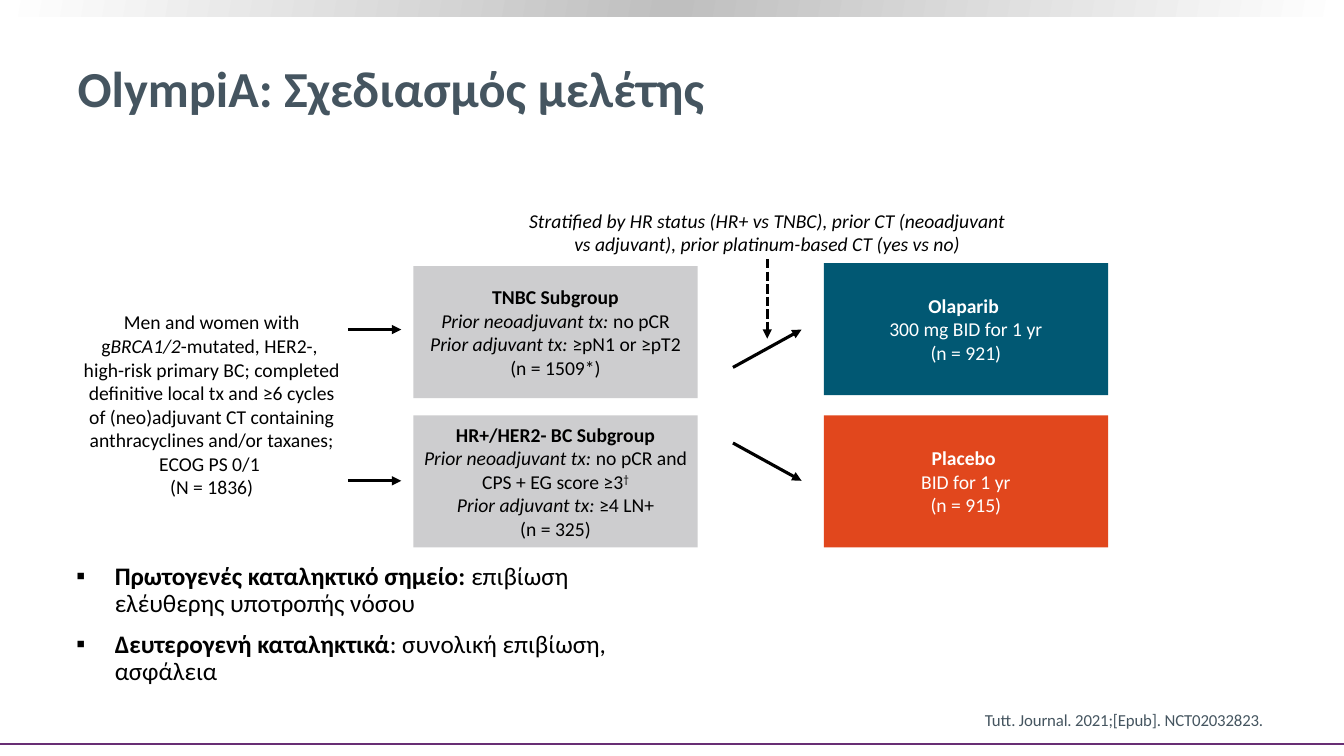
"""Build the OlympiA study design slide."""
import pptx
import pptx.util
import pptx.dml.color
import pptx.enum.dml
import pptx.enum.shapes
import pptx.enum.text
import pptx.oxml
import pptx.oxml.ns

Inches, Pt = pptx.util.Inches, pptx.util.Pt
ALIGN, ANCHOR = pptx.enum.text.PP_ALIGN, pptx.enum.text.MSO_ANCHOR
RECT = pptx.enum.shapes.MSO_SHAPE.RECTANGLE
NS = pptx.oxml.ns.nsdecls("a")

W, H = 13.33, 7.5
BLACK, WHITE, SLATE, GREY = "000000", "FFFFFF", "455560", "CDCDCF"
TEAL, ORANGE, PURPLE = "015873", "E1471D", "682E74"

TITLE = [[("OlympiA: Σχεδιασμός μελέτης", "b")]]
POPULATION = [
    [("Men and women with g", ""), ("BRCA1/2", "i"),
     ("-mutated, HER2-, \nhigh-risk primary BC; completed definitive local tx and ≥6 cycles "
      "of (neo)adjuvant CT containing anthracyclines and/or taxanes; ECOG PS 0/1 ", "")],
    [("(N = 1836)", "")],
]
STRATA = [[("Stratified by HR status (HR+ vs TNBC), prior CT (neoadjuvant vs adjuvant), "
            "prior platinum-based CT (yes vs no)", "i")]]
TNBC = [
    [("TNBC Subgroup", "b")],
    [("Prior neoadjuvant tx:", "i"), (" no pCR", "")],
    [("Prior adjuvant tx:", "i"), (" ≥pN1 or ≥pT2", "")],
    [("(n = 1509*)", "")],
]
HR_POSITIVE = [
    [("HR+/HER2- BC Subgroup", "b")],
    [("Prior neoadjuvant tx:", "i"), (" no pCR and CPS + EG score ≥3", ""), ("†", "^")],
    [("Prior adjuvant tx:", "i"), (" ≥4 LN+", "")],
    [("(n = 325)", "")],
]
OLAPARIB = [[("Olaparib ", "b")], [("300 mg BID for 1 yr", "")], [("(n = 921)", "")]]
PLACEBO = [[("Placebo ", "b")], [("BID for 1 yr", "")], [("(n = 915)", "")]]
ENDPOINTS = [
    [("Πρωτογενές καταληκτικό σημείο: ", "b"), ("επιβίωση ελέυθερης υποτροπής νόσου", "")],
    [("Δευτερογενή καταληκτικά", "b"), (": συνολική επιβίωση, ασφάλεια", "")],
]
CITATION = [[("Tutt. Journal. 2021;[Epub]. NCT02032823.", "~")]]

BOX_W, BOX_H = 2.82, 1.31
SUBGROUP_X, ARM_X = 4.1, 8.17
ROW_Y = (2.61, 4.12)
ROW_MID = (3.27, 4.77)
CENTRE_Y = sum(ROW_MID) / 2
ENTRY_X, SPLIT_X = (3.45, 3.98), (7.27, 7.95)
STRATA_X = sum(SPLIT_X) / 2
BOXES = [
    (SUBGROUP_X, ROW_Y[0] + 0.03, GREY, BLACK, TNBC),
    (SUBGROUP_X, ROW_Y[1], GREY, BLACK, HR_POSITIVE),
    (ARM_X, ROW_Y[0], TEAL, WHITE, OLAPARIB),
    (ARM_X, ROW_Y[1], ORANGE, WHITE, PLACEBO),
]
TEXTS = [
    ((0.69, 3.03, BOX_W, 1.99), POPULATION, 14, BLACK, ALIGN.CENTER, ANCHOR.TOP),
    ((5.12, 2.02, 4.98, 0.57), STRATA, 14, BLACK, ALIGN.CENTER, ANCHOR.MIDDLE),
    ((0.45, 6.99, 12.18, 0.3), CITATION, 12, SLATE, ALIGN.RIGHT, ANCHOR.BOTTOM),
]
RUN_XML = {"^": ("baseline", "30000"), "~": ("spc", "-10")}


def rgb(code):
    """Turn a hex string into a colour."""
    return pptx.dml.color.RGBColor.from_string(code)


def apply(obj, values):
    """Set attributes from a dict."""
    for name, value in values.items():
        setattr(obj, name, value)


def write(sp, paragraphs, size, color, align, anchor):
    """Fill a shape with paragraphs of (text, style) runs."""
    tf = sp.text_frame
    apply(tf, {"word_wrap": True, "vertical_anchor": anchor})
    for n, runs in enumerate(paragraphs):
        p = tf.add_paragraph() if n else tf.paragraphs[0]
        p.alignment = align
        for text, style in runs:
            for k, line in enumerate(text.split("\n")):
                if k:
                    p.add_line_break()
                r = p.add_run()
                r.text = line
                apply(r.font, {"name": "Calibri", "size": Pt(size),
                               "bold": "b" in style, "italic": "i" in style})
                r.font.color.rgb = rgb(color)
                if style in RUN_XML:
                    r._r.get_or_add_rPr().set(*RUN_XML[style])
    return tf


def add_rect(s, place, color):
    """Add a plain filled rectangle."""
    sp = s.shapes.add_shape(RECT, *map(Inches, place))
    sp.shadow.inherit = False
    sp.fill.solid()
    sp.fill.fore_color.rgb = rgb(color)
    sp.line.fill.background()
    return sp


def add_text(s, place, *content):
    """Add a text box with its text."""
    return write(s.shapes.add_textbox(*map(Inches, place)), *content)


def add_line(s, ends, color=BLACK, width=2.25, arrow=True):
    """Add a straight line, with an arrowhead at its end if wanted."""
    line = s.shapes.add_connector(pptx.enum.shapes.MSO_CONNECTOR.STRAIGHT, *map(Inches, ends))
    line.line.color.rgb = rgb(color)
    line.line.width = Pt(width)
    if arrow:
        line.line._get_or_add_ln().append(
            pptx.oxml.parse_xml(f'<a:tailEnd {NS} type="triangle"/>'))
    line._element.spPr.append(pptx.oxml.parse_xml(f"<a:effectLst {NS}/>"))
    return line


def add_band(s):
    """Add the shaded band along the top edge."""
    band = add_rect(s, (0, 0, W, 0.16), WHITE)
    stops = "".join(f'<a:gs pos="{pos}000"><a:srgbClr val="{c}"/></a:gs>'
                    for pos, c in ((0, WHITE), (50, "BFBFBF"), (100, WHITE)))
    solid = band._element.spPr.find(pptx.oxml.ns.qn("a:solidFill"))
    solid.getparent().replace(solid, pptx.oxml.parse_xml(
        f'<a:gradFill {NS}><a:gsLst>{stops}</a:gsLst><a:lin ang="{190 * 60000}"/></a:gradFill>'))


def add_endpoints(s):
    """Add the bulleted endpoints."""
    tf = add_text(s, (0.66, 5.54, 5.81, 1.22), ENDPOINTS, 18, BLACK, ALIGN.LEFT, ANCHOR.TOP)
    indent = Inches(0.38)
    for p in tf.paragraphs:
        apply(p, {"line_spacing": 0.9, "space_before": Pt(10)})
        pPr = p._p.get_or_add_pPr()
        pPr.set("marL", str(indent))
        pPr.set("indent", str(-indent))
        for xml in (f'<a:buClr {NS}><a:srgbClr val="{BLACK}"/></a:buClr>',
                    f'<a:buFont {NS} typeface="Calibri"/>',
                    f'<a:buChar {NS} char="▪"/>'):
            pPr.append(pptx.oxml.parse_xml(xml))


def main():
    """Build and save the slide."""
    prs = pptx.Presentation()
    apply(prs, {"slide_width": Inches(W), "slide_height": Inches(H)})
    s = prs.slides.add_slide(prs.slide_layouts[5])
    add_band(s)
    add_line(s, (0, 7.38, W, 7.38), PURPLE, 1.5, arrow=False)

    title = s.shapes.title
    apply(title, dict(zip(("left", "top", "width", "height"),
                          map(Inches, (0.67, 0.26, 11.89, 1.21)))))
    write(title, TITLE, 36, SLATE, ALIGN.LEFT, ANCHOR.MIDDLE)

    for x, y, fill, color, content in BOXES:
        box = add_rect(s, (x, y, BOX_W, BOX_H), fill)
        write(box, content, 14, color, ALIGN.CENTER, ANCHOR.MIDDLE)
    for place, *content in TEXTS:
        add_text(s, place, *content)
    add_endpoints(s)

    for y in ROW_MID:
        add_line(s, (ENTRY_X[0], y, ENTRY_X[1], y))
        add_line(s, (SPLIT_X[0], (CENTRE_Y + y) / 2, SPLIT_X[1], y))
    strata = add_line(s, (STRATA_X, 2.57, STRATA_X, 3.36))
    strata.line.dash_style = pptx.enum.dml.MSO_LINE.SQUARE_DOT
    prs.save("out.pptx")


if __name__ == "__main__":
    main()
